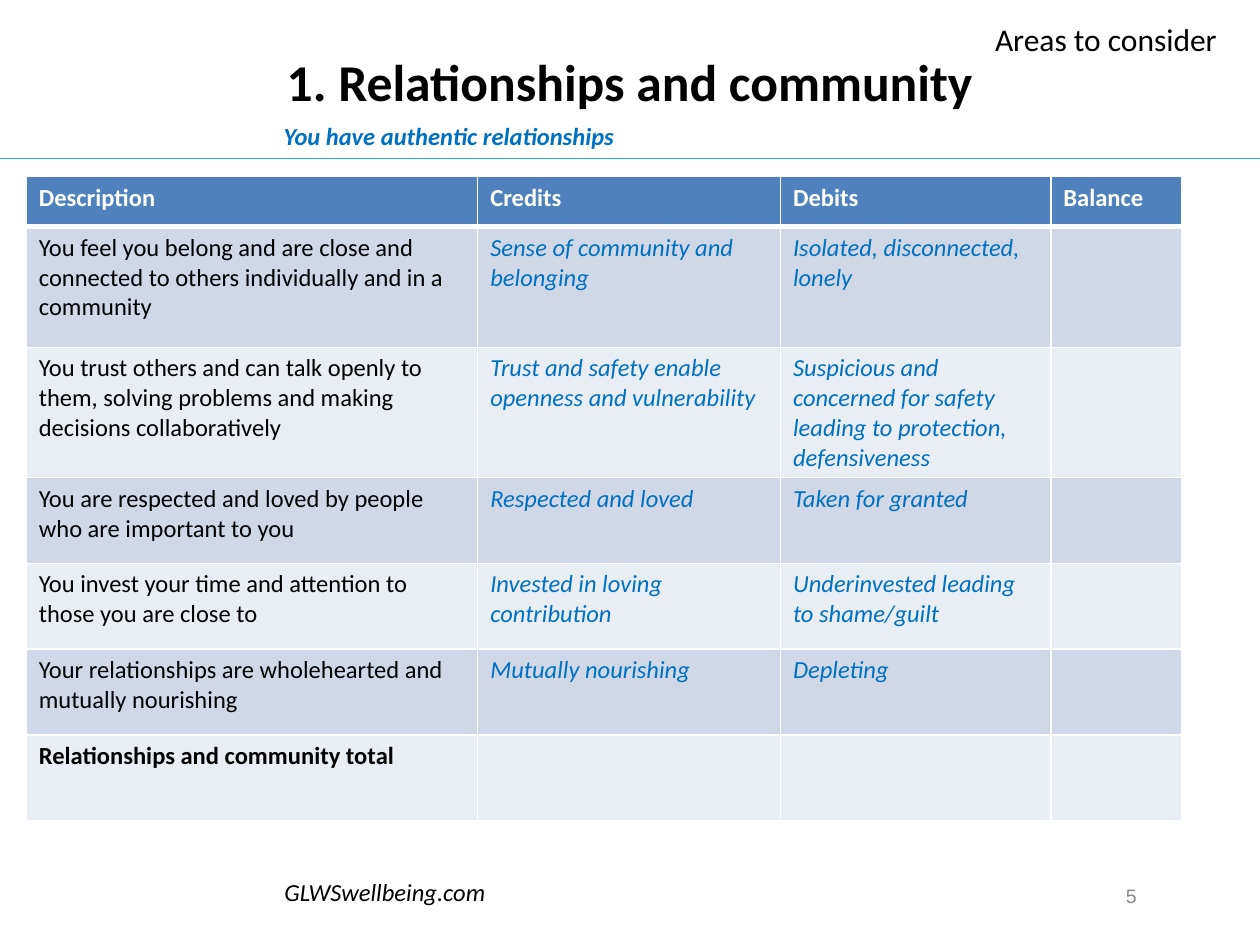
from lxml.etree import SubElement
from pptx import Presentation
from pptx.dml.color import RGBColor
from pptx.enum.shapes import MSO_CONNECTOR
from pptx.enum.text import MSO_ANCHOR, PP_ALIGN
from pptx.oxml.ns import qn
from pptx.util import Pt

THEME = dict(
    font="Calibri", number_font="Arial",
    black="000000", white="FFFFFF", blue="0070C0", grey="898989", rule="28A4FF",
    header="4F81BD", bands=("D0D8E8", "E9EDF4"),
    title=29.5, label=18, body=14, number=11.1,
)
HEADERS = ["Description", "Credits", "Debits", "Balance"]
ROWS = [
    ["You feel you belong and are close and connected to others individually and in a community",
     "Sense of community and belonging", "Isolated, disconnected, lonely", ""],
    ["You trust others and can talk openly to them, solving problems and making decisions collaboratively",
     "Trust and safety enable openness and vulnerability",
     "Suspicious and concerned for safety leading to protection, defensiveness", ""],
    ["You are respected and loved by people who are important to you",
     "Respected and loved", "Taken for granted", ""],
    ["You invest your time and attention to those you are close to",
     "Invested in loving contribution", "Underinvested leading to shame/guilt", ""],
    ["Your relationships are wholehearted and mutually nourishing",
     "Mutually nourishing", "Depleting", ""],
    ["Relationships and community total", "", "", ""],
]
COL_WIDTHS = [258, 173, 154.5, 75]
ROW_HEIGHTS = [28.5, 69, 70.5] + [49] * 4


def color(name):
    return RGBColor.from_string(THEME.get(name, name))


def write(tf, text, size="body", fill="black", font="font", bold=False,
          italic=False, align=PP_ALIGN.LEFT, spacing=None):
    p = tf.paragraphs[0]
    p.alignment = align
    p.line_spacing = spacing
    r = p.add_run()
    r.text = text
    r.font.name = THEME[font]
    r.font.size = Pt(THEME[size])
    r.font.bold, r.font.italic = bold, italic
    r.font.color.rgb = color(fill)


def add_text(slide, text, box, wrap=True, anchor=MSO_ANCHOR.TOP, **fmt):
    tf = slide.shapes.add_textbox(*map(Pt, box)).text_frame
    tf.word_wrap = wrap
    tf.vertical_anchor = anchor
    write(tf, text, **fmt)


def add_borders(cell, bottom=1, top=1):
    tcPr = cell._tc.get_or_add_tcPr()
    for side, width in (("L", 1), ("R", 1), ("T", top), ("B", bottom)):
        ln = SubElement(tcPr, qn(f"a:ln{side}"), w=str(Pt(width)))
        SubElement(SubElement(ln, qn("a:solidFill")), qn("a:srgbClr"), val=THEME["white"])


def cell_format(row, col):
    if row == 0:
        return dict(fill="white", bold=True)
    if col == 0:
        return dict(bold=row == len(ROWS))
    return dict(fill="blue", italic=True)


def add_balance_table(slide, left, top):
    table = slide.shapes.add_table(
        len(ROW_HEIGHTS), len(COL_WIDTHS), Pt(left), Pt(top),
        Pt(sum(COL_WIDTHS)), Pt(sum(ROW_HEIGHTS))).table
    for column, width in zip(table.columns, COL_WIDTHS):
        column.width = Pt(width)
    for i, (height, texts) in enumerate(zip(ROW_HEIGHTS, [HEADERS] + ROWS)):
        table.rows[i].height = Pt(height)
        band = THEME["bands"][(i - 1) % 2] if i else "header"
        for j, text in enumerate(texts):
            cell = table.cell(i, j)
            add_borders(cell, bottom=1 if i else 3, top=3 if i == 1 else 1)
            cell.fill.solid()
            cell.fill.fore_color.rgb = color(band)
            if text:
                write(cell.text_frame, text, **cell_format(i, j))


def add_rule(slide, y, width):
    line = slide.shapes.add_connector(MSO_CONNECTOR.STRAIGHT, 0, Pt(y), Pt(width), Pt(y))
    line.line.color.rgb = color("rule")
    line.line.width = Pt(0.75)
    SubElement(line._element.spPr, qn("a:effectLst"))


def main():
    prs = Presentation()
    prs.slide_width, prs.slide_height = Pt(720), Pt(540)
    slide = prs.slides.add_slide(prs.slide_layouts[6])
    add_rule(slide, 90.5, 720)
    add_text(slide, "1. Relationships and community", (0, 1, 720, 90), size="title",
             bold=True, align=PP_ALIGN.CENTER, anchor=MSO_ANCHOR.MIDDLE)
    add_text(slide, "5", (609, 497.5, 75, 29), size="number", fill="grey",
             font="number_font", align=PP_ALIGN.CENTER, anchor=MSO_ANCHOR.MIDDLE)
    add_balance_table(slide, 15, 101)
    add_text(slide, "You have authentic relationships", (155, 57, 436, 30),
             fill="blue", bold=True, italic=True, spacing=1.5)
    add_text(slide, "Areas to consider", (561.5, 8, 142.5, 29), wrap=False, size="label")
    add_text(slide, "GLWSwellbeing.com", (155, 497.5, 130, 24.5), wrap=False,
             italic=True, align=PP_ALIGN.CENTER)
    prs.save("out.pptx")


if __name__ == "__main__":
    main()
